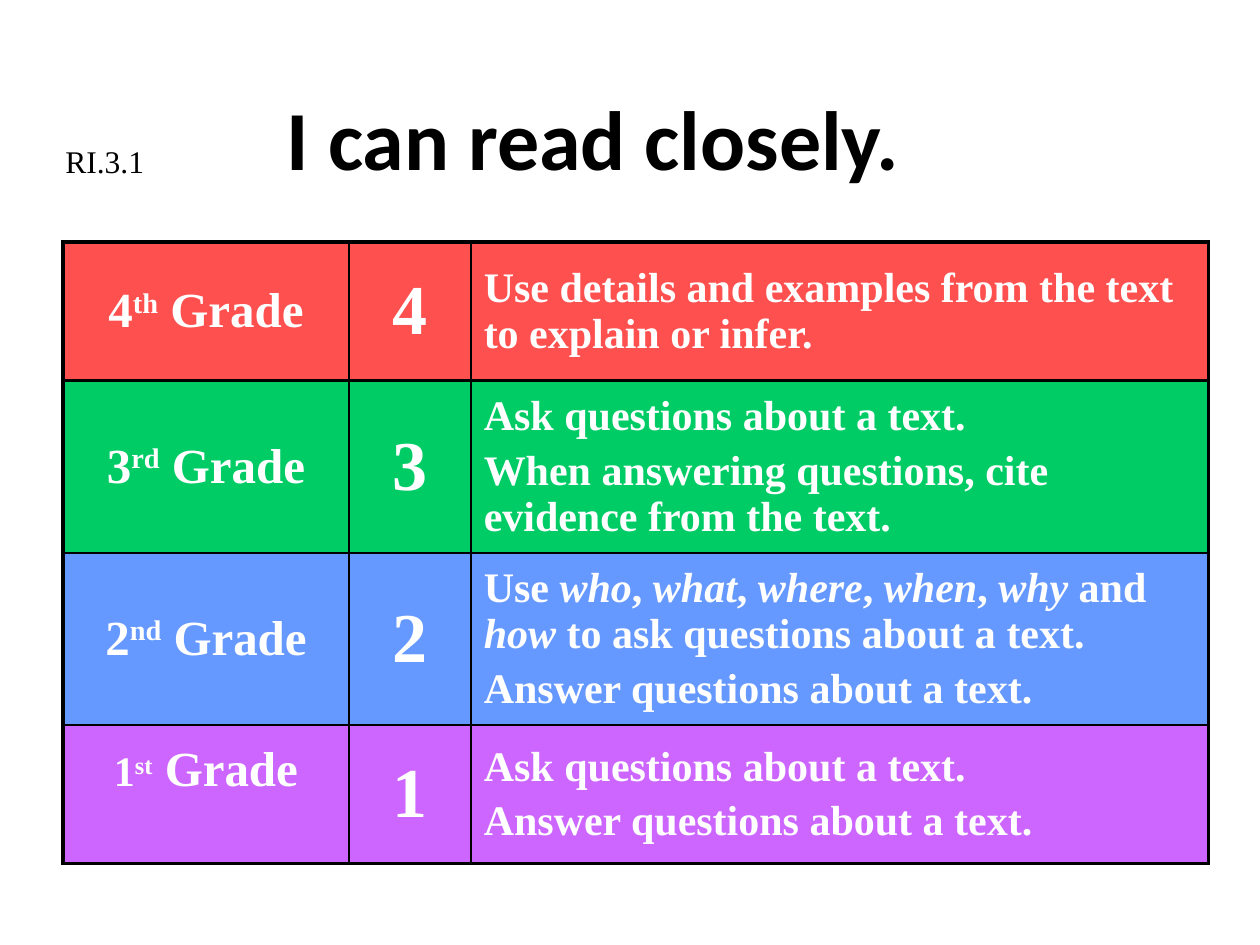
from dataclasses import dataclass

from lxml import etree
from pptx import Presentation
from pptx import util as u
from pptx.dml.color import RGBColor
from pptx.enum import text
from pptx.oxml.ns import qn

SERIF = "Times New Roman"
WHITE, BLACK = "FFFFFF", "000000"
COLS = (2.27, 0.97, 5.85)
ROWS = (1.1, 1.27, 1.27, 1.1)
ROW_LINES = (2.25, 1.5, 1, 1, 1.5)  # horizontal rules, top to bottom
COL_LINES = (2.25, 1, 1, 2.25)  # vertical rules, left to right


@dataclass
class Level:
    number: str
    suffix: str
    color: str
    goals: tuple[str, ...]  # *word* is italic
    number_size: float = 28
    bottom: float = 0.05


LEVELS = (
    Level("4", "th", "FF5050",
          ("Use details and examples from the text to explain or infer.",)),
    Level("3", "rd", "00CC66",
          ("Ask questions about a text.",
           "When answering questions, cite evidence from the text.")),
    Level("2", "nd", "6699FF",
          ("Use *who*, *what*, *where*, *when*, *why* and *how* to ask questions about a text.",
           "Answer questions about a text.")),
    Level("1", "st", "CC66FF",
          ("Ask questions about a text.", "Answer questions about a text."),
          number_size=24, bottom=0.43),
)


def rgb(color: str) -> RGBColor:
    return RGBColor.from_string(color)


def add_run(p, words: str, size: float, font: str = SERIF, color: str = WHITE,
            bold: bool = True, italic: bool = False, raised: bool = False) -> None:
    r = p.add_run()
    r.text = words
    f = r.font
    f.name, f.size, f.bold, f.italic = font, u.Pt(size), bold, italic
    f.color.rgb = rgb(color)
    if raised:
        r._r.get_or_add_rPr().set("baseline", "30000")


def add_label(s, words: str, left: float, top: float, width: float, height: float, **style):
    tf = s.shapes.add_textbox(*map(u.Inches, (left, top, width, height))).text_frame
    tf.word_wrap = True
    add_run(tf.paragraphs[0], words, **style)
    return tf


def set_borders(cell, widths: dict[str, float]) -> None:
    tc_pr = cell._tc.get_or_add_tcPr()
    for i, (side, width) in enumerate(widths.items()):
        ln = etree.Element(qn(f"a:ln{side}"), w=str(u.Pt(width)))
        fill = etree.SubElement(ln, qn("a:solidFill"))
        etree.SubElement(fill, qn("a:srgbClr"), val=BLACK)
        tc_pr.insert(i, ln)


def fill_row(table, row: int, level: Level) -> None:
    cells = [table.cell(row, col) for col in range(len(COLS))]
    for col, cell in enumerate(cells):
        cell.fill.solid()
        cell.fill.fore_color.rgb = rgb(level.color)
        cell.vertical_anchor = text.MSO_ANCHOR.MIDDLE
        set_borders(cell, {"L": COL_LINES[col], "R": COL_LINES[col + 1],
                           "T": ROW_LINES[row], "B": ROW_LINES[row + 1]})
    grade, score, goals = cells

    # Grade with raised ordinal
    grade.margin_bottom = u.Inches(level.bottom)
    p = grade.text_frame.paragraphs[0]
    p.alignment = text.PP_ALIGN.CENTER
    add_run(p, level.number, level.number_size)
    add_run(p, level.suffix, level.number_size, raised=True)
    add_run(p, " Grade", 28)

    # Score
    p = score.text_frame.paragraphs[0]
    p.alignment = text.PP_ALIGN.CENTER
    add_run(p, level.number, 40)

    # Goals
    tf = goals.text_frame
    for i, goal in enumerate(level.goals):
        p = tf.add_paragraph() if i else tf.paragraphs[0]
        if i:
            p.space_before = u.Pt(4.8)
        for j, part in enumerate(goal.split("*")):
            add_run(p, part, 24, italic=j % 2 == 1)


def main() -> None:
    prs = Presentation()
    prs.slide_width, prs.slide_height = u.Inches(10), u.Inches(7.5)
    s = prs.slides.add_slide(prs.slide_layouts[6])

    # Title
    tf = add_label(s, "I can read closely.", 0.25, 0.25, 9.25, 1.67,
                   size=48, font="Calibri", color=BLACK)
    tf.vertical_anchor = text.MSO_ANCHOR.MIDDLE
    tf.margin_right = u.Inches(0.43)
    tf.paragraphs[0].alignment = text.PP_ALIGN.CENTER

    # Grade scale
    table = s.shapes.add_table(
        len(ROWS), len(COLS),
        *map(u.Inches, (0.5, 1.92, sum(COLS), sum(ROWS)))).table
    table.first_row = table.horz_banding = False
    for column, width in zip(table.columns, COLS):
        column.width = u.Inches(width)
    for i, level in enumerate(LEVELS):
        table.rows[i].height = u.Inches(ROWS[i])
        fill_row(table, i, level)

    # Standard code
    add_label(s, "RI.3.1", 0.42, 1.08, 1.42, 0.4, size=18, color=BLACK, bold=False)

    prs.save("out.pptx")


if __name__ == "__main__":
    main()
